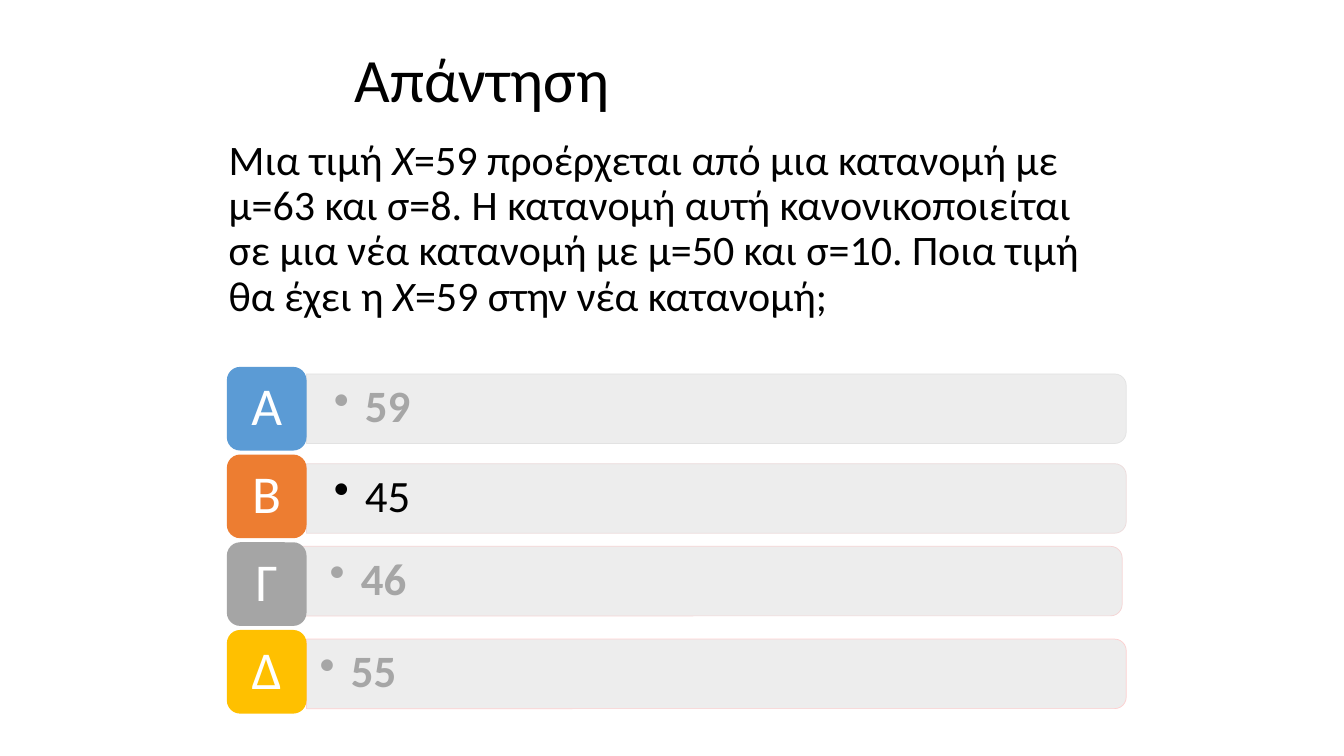
from dataclasses import dataclass

from lxml import etree
from pptx import Presentation
from pptx import util as u
from pptx.dml.color import RGBColor
from pptx.enum import shapes, text
from pptx.oxml import ns


@dataclass(frozen=True)
class Theme:
    font: str = "Calibri"
    ink: str = "000000"
    muted: str = "A6A6A6"
    white: str = "FFFFFF"
    bar: str = "EDEDED"
    title_size: int = 44
    question_size: int = 30
    answer_size: int = 32
    letter_size: int = 38


@dataclass(frozen=True)
class Answer:
    letter: str
    value: str
    badge_color: str
    line_color: str
    bar_left: float
    bar_top: float
    inset: tuple[float, float] = (0.27, 0.14)
    correct: bool = False


THEME = Theme()
BAR_LENGTH, BAR_HEIGHT = 8.13, 0.69
BADGE_LEFT, BADGE_TOP, BADGE_STEP = 2.25, 3.64, 0.87
BADGE_WIDTH, BADGE_HEIGHT = 0.79, 0.83
HANG = 0.31

QUESTION = [
    ("Μια τιμή ", False),
    ("X", True),
    ("=59 προέρχεται από μια κατανομή με μ=63 και σ=8. Η κατανομή αυτή "
     "κανονικοποιείται σε μια νέα κατανομή με μ=50 και σ=10. Ποια τιμή θα έχει η ", False),
    ("X", True),
    ("=59 στην νέα κατανομή;", False),
]

ANSWERS = [
    Answer("A", "59", "5B9BD5", "E1E1E1", 3.04, 3.71),
    Answer("B", "45", "ED7D31", "ECD9D9", 3.04, 4.60, correct=True),
    Answer("Γ", "46", "A5A5A5", "F6D1D1", 3.00, 5.42),
    Answer("Δ", "55", "FFC000", "FFCBCB", 3.04, 6.34, inset=(0.13, 0.07)),
]


def style(para, size: int, color: str, bold: bool = False) -> None:
    para.line_spacing = 0.9
    para.font.name = THEME.font
    para.font.size = u.Pt(size)
    para.font.bold = bold
    para.font.color.rgb = RGBColor.from_string(color)


def set_insets(frame, across: float, down: float) -> None:
    frame.margin_left = frame.margin_right = u.Inches(across)
    frame.margin_top = frame.margin_bottom = u.Inches(down)
    frame.vertical_anchor = text.MSO_ANCHOR.MIDDLE
    frame.word_wrap = True


def add_bullet(para) -> None:
    props = para._p.get_or_add_pPr()
    props.set("marL", str(u.Inches(HANG)))
    props.set("indent", str(-u.Inches(HANG)))
    etree.SubElement(props, ns.qn("a:buChar")).set("char", "•")


def add_panel(page, kind, left: float, top: float, width: float, height: float, fill: str):
    panel = page.shapes.add_shape(
        kind, u.Inches(left), u.Inches(top), u.Inches(width), u.Inches(height))
    panel.shadow.inherit = False
    panel.fill.solid()
    panel.fill.fore_color.rgb = RGBColor.from_string(fill)
    panel.line.fill.background()
    return panel


def add_bar(page, answer: Answer) -> None:
    shift = (BAR_LENGTH - BAR_HEIGHT) / 2
    bar = add_panel(page, shapes.MSO_SHAPE.ROUND_2_SAME_RECTANGLE,
                    answer.bar_left + shift, answer.bar_top - shift,
                    BAR_HEIGHT, BAR_LENGTH, THEME.bar)
    bar.rotation = 90
    bar.line.color.rgb = RGBColor.from_string(answer.line_color)
    bar.line.width = u.Pt(0.5)
    color = bar.line._ln.find(".//" + ns.qn("a:srgbClr"))
    etree.SubElement(color, ns.qn("a:alpha")).set("val", "90000")


def add_value(page, answer: Answer) -> None:
    box = page.shapes.add_textbox(
        u.Inches(answer.bar_left), u.Inches(answer.bar_top + 0.03),
        u.Inches(8.09), u.Inches(0.62))
    set_insets(box.text_frame, *answer.inset)
    para = box.text_frame.paragraphs[0]
    para.text = answer.value
    para.level = 1
    style(para, THEME.answer_size, THEME.ink if answer.correct else THEME.muted,
          not answer.correct)
    add_bullet(para)


def add_badge(page, answer: Answer, row: int) -> None:
    badge = add_panel(page, shapes.MSO_SHAPE.ROUNDED_RECTANGLE,
                      BADGE_LEFT, BADGE_TOP + row * BADGE_STEP,
                      BADGE_WIDTH, BADGE_HEIGHT, answer.badge_color)
    set_insets(badge.text_frame, 0.16, 0.08)
    para = badge.text_frame.paragraphs[0]
    para.text = answer.letter
    para.alignment = text.PP_ALIGN.CENTER
    style(para, THEME.letter_size, THEME.white)


def add_title(page) -> None:
    title = page.shapes.title
    title.left, title.top = u.Inches(3.42), u.Inches(0.3)
    title.width, title.height = u.Inches(8.08), u.Inches(1.03)
    title.text_frame.vertical_anchor = text.MSO_ANCHOR.MIDDLE
    para = title.text_frame.paragraphs[0]
    para.text = "Απάντηση"
    para.alignment = text.PP_ALIGN.LEFT
    style(para, THEME.title_size, THEME.ink)


def add_question(page) -> None:
    box = page.shapes.add_textbox(
        u.Inches(2.17), u.Inches(1.33), u.Inches(9), u.Inches(2.2))
    box.text_frame.word_wrap = True
    para = box.text_frame.paragraphs[0]
    para.space_before = u.Pt(10)
    style(para, THEME.question_size, THEME.ink)
    for words, italic in QUESTION:
        span = para.add_run()
        span.text = words
        span.font.italic = italic


def main() -> None:
    deck = Presentation()
    deck.slide_width, deck.slide_height = u.Inches(13.33), u.Inches(7.5)
    page = deck.slides.add_slide(deck.slide_layouts.get_by_name("Title Only"))
    add_title(page)
    add_question(page)
    for row, answer in enumerate(ANSWERS):
        add_bar(page, answer)
        add_value(page, answer)
        add_badge(page, answer, row)
    deck.save("out.pptx")


if __name__ == "__main__":
    main()
